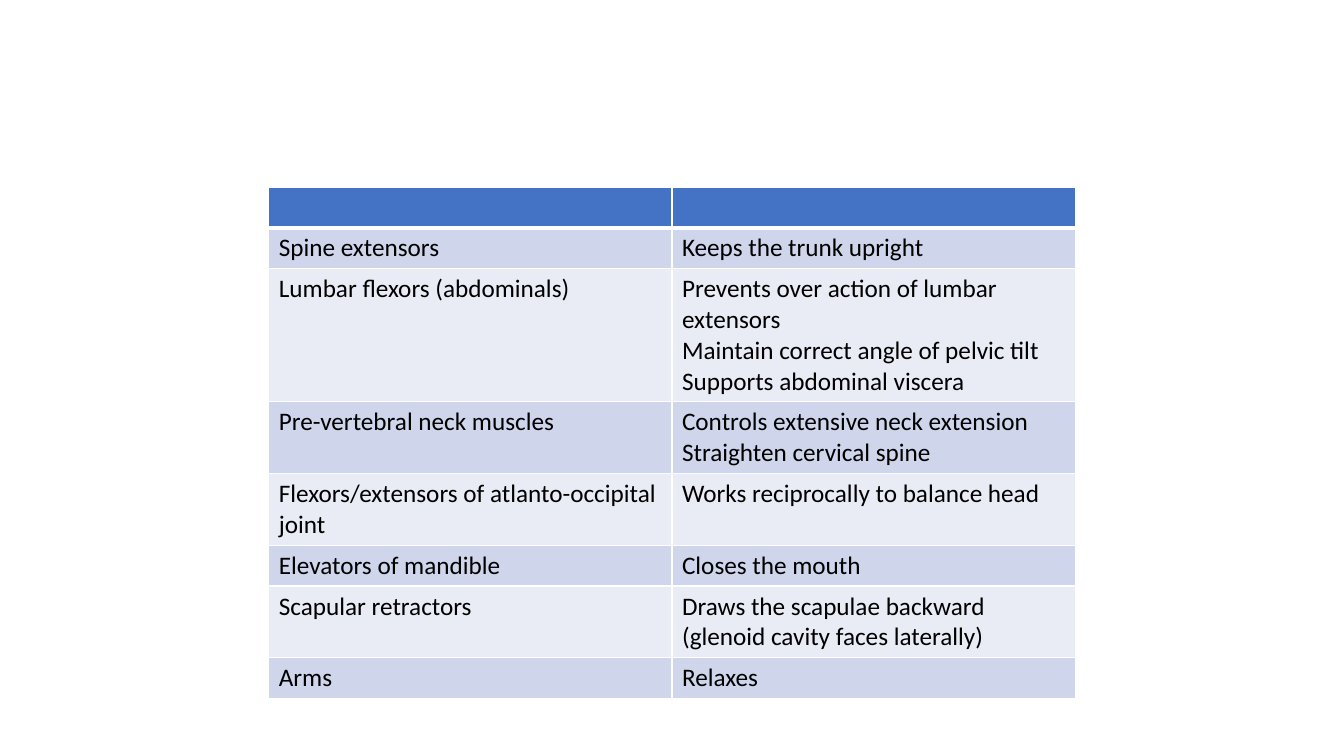
from lxml import etree
from pptx import Presentation
from pptx.dml.color import RGBColor
from pptx.oxml.ns import qn
from pptx.util import Pt

PX = 9525  # EMU per pixel, 96 pixels to the inch
BLANK_LAYOUT = 6
COLORS = {"header": "4472C4", "odd": "CFD5EA", "even": "E9EBF5",
          "border": "FFFFFF", "text": "000000"}
ROW_HEIGHT = 39
COLUMN_WIDTH = 384
TABLE_LEFT, TABLE_TOP = 256, 178

# Muscle group and its role; the header row is empty
ROWS = [
    ("", ""),
    ("Spine extensors", "Keeps the trunk upright"),
    ("Lumbar flexors (abdominals)",
     "Prevents over action of lumbar extensors\n"
     "Maintain correct angle of pelvic tilt\n"
     "Supports abdominal viscera"),
    ("Pre-vertebral neck muscles",
     "Controls extensive neck extension\nStraighten cervical spine"),
    ("Flexors/extensors of atlanto-occipital joint",
     "Works reciprocally to balance head"),
    ("Elevators of mandible", "Closes the mouth"),
    ("Scapular retractors",
     "Draws the scapulae backward (glenoid cavity faces laterally)"),
    ("Arms", "Relaxes"),
]


def set_borders(cell, widths):
    """Draw the left, right, top and bottom borders, widths in points."""
    properties = cell._tc.get_or_add_tcPr()
    for position, (side, width) in enumerate(zip("LRTB", widths)):
        line = etree.Element(qn(f"a:ln{side}"), w=str(Pt(width)))
        fill = etree.SubElement(line, qn("a:solidFill"))
        etree.SubElement(fill, qn("a:srgbClr"), val=COLORS["border"])
        properties.insert(position, line)


# Slide
deck = Presentation()
deck.slide_width = 1280 * PX
deck.slide_height = 720 * PX
page = deck.slides.add_slide(deck.slide_layouts[BLANK_LAYOUT])

# Table
table = page.shapes.add_table(
    len(ROWS), 2, TABLE_LEFT * PX, TABLE_TOP * PX,
    2 * COLUMN_WIDTH * PX, len(ROWS) * ROW_HEIGHT * PX).table

for row_index, texts in enumerate(ROWS):
    table.rows[row_index].height = ROW_HEIGHT * PX
    if row_index == 0:
        band, widths = "header", (1, 1, 1, 3)
    else:
        band = "odd" if row_index % 2 else "even"
        widths = (1, 1, 3 if row_index == 1 else 1, 1)
    for column_index, text in enumerate(texts):
        cell = table.cell(row_index, column_index)
        cell.fill.solid()
        cell.fill.fore_color.rgb = RGBColor.from_string(COLORS[band])
        set_borders(cell, widths)
        cell.text_frame.text = text
        for para in cell.text_frame.paragraphs:
            para.font.size = Pt(18)
            for span in para.runs:
                span.font.size = Pt(18)
                span.font.name = "Calibri"
                span.font.color.rgb = RGBColor.from_string(COLORS["text"])

deck.save("out.pptx")
